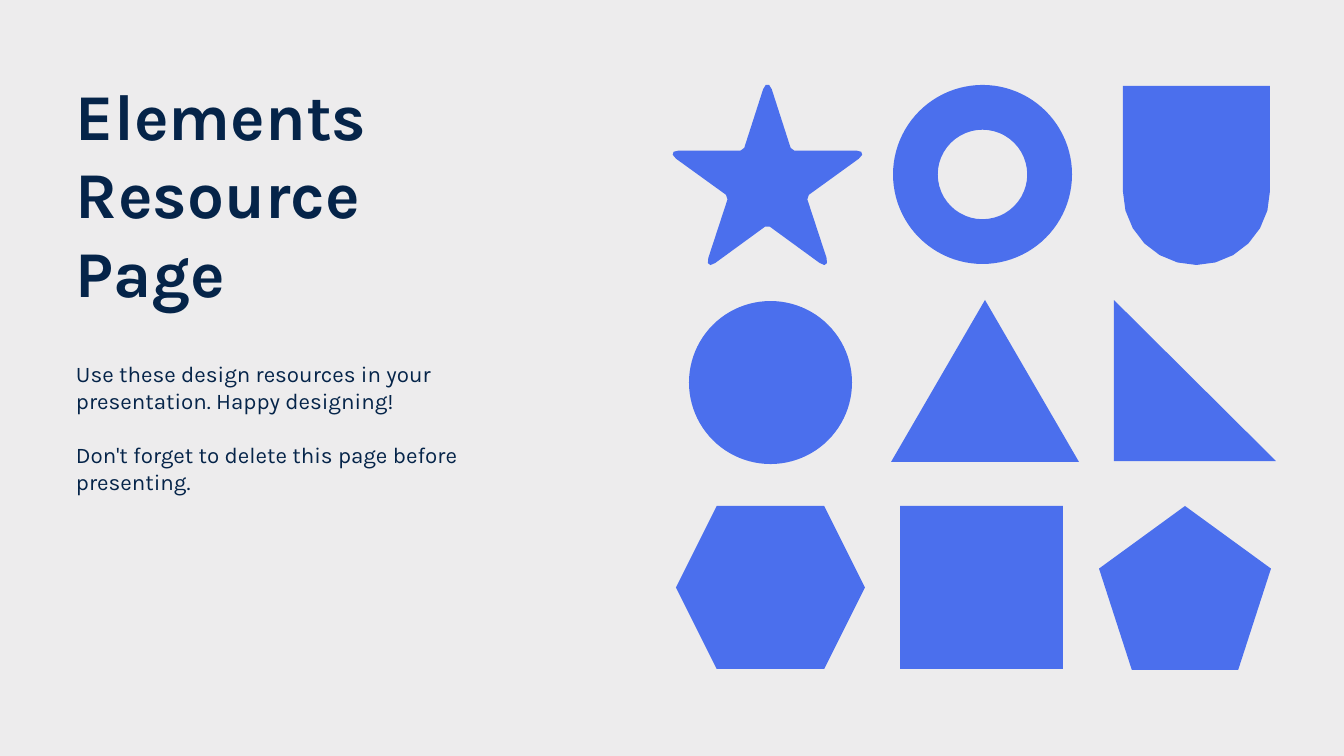
from dataclasses import dataclass
from math import cos, dist, pi, sin

from pptx import Presentation
from pptx.dml.color import RGBColor
from pptx.enum.shapes import MSO_SHAPE
from pptx.enum.text import MSO_ANCHOR, PP_ALIGN
from pptx.util import Emu, Pt

SLIDE_WIDTH, SLIDE_HEIGHT = 1344, 756
EMU_PER_PX = 914400 / 134.4


@dataclass(frozen=True)
class Theme:
    background: RGBColor = RGBColor(0xED, 0xEC, 0xED)
    ink: RGBColor = RGBColor(0x05, 0x24, 0x49)
    accent: RGBColor = RGBColor(0x4B, 0x6F, 0xED)
    font: str = "Karla"
    title_size: float = 35
    body_size: float = 12
    body_gap: float = 14.5


THEME = Theme()


def px(length):
    return Emu(round(length * EMU_PER_PX))


def add_text(slide, box, lines, size, bold=False, gap=0):
    """Place one paragraph per line, with a gap in points between paragraphs."""
    frame = slide.shapes.add_textbox(*map(px, box)).text_frame
    frame.word_wrap = True
    frame.vertical_anchor = MSO_ANCHOR.TOP
    frame.margin_left = frame.margin_top = frame.margin_right = frame.margin_bottom = 0
    for index, line in enumerate(lines):
        paragraph = frame.add_paragraph() if index else frame.paragraphs[0]
        paragraph.alignment = PP_ALIGN.LEFT
        paragraph.space_before = Pt(gap if index else 0)
        run = paragraph.add_run()
        run.text = line
        run.font.name = THEME.font
        run.font.size = Pt(size)
        run.font.bold = bold
        run.font.color.rgb = THEME.ink


def paint(shape):
    shape.shadow.inherit = False
    shape.fill.solid()
    shape.fill.fore_color.rgb = THEME.accent
    shape.line.fill.background()


def add_outline(slide, points):
    corners = [(px(x), px(y)) for x, y in points]
    builder = slide.shapes.build_freeform(*corners[0])
    builder.add_line_segments(corners[1:], close=True)
    paint(builder.convert_to_shape())


def toward(start, end, ratio):
    return tuple(s + (e - s) * ratio for s, e in zip(start, end))


def blunt_tip(before, corner, after, cut):
    """Return four points that round off a tip within the cut distance."""
    start = toward(corner, before, cut / dist(corner, before))
    end = toward(corner, after, cut / dist(corner, after))
    inner_start, inner_end = toward(corner, start, 2 / 3), toward(corner, end, 2 / 3)
    return [start, toward(inner_start, inner_end, 0.22),
            toward(inner_start, inner_end, 0.78), end]


def blunt_notch(before, corner, after, cut):
    return [toward(corner, side, cut / dist(corner, side)) for side in (before, after)]


def add_rounded_star(slide, box):
    left, top, width, _ = box
    center_x, center_y = left + width / 2, top + 99
    tip_radius, notch_radius, tip_cut, notch_cut = 108, 41, 14, 3
    corners = []
    for index in range(10):
        radius = notch_radius if index % 2 else tip_radius
        angle = index * pi / 5
        corners.append((center_x + radius * sin(angle), center_y - radius * cos(angle)))
    points = []
    for index, corner in enumerate(corners):
        before, after = corners[index - 1], corners[(index + 1) % 10]
        if index % 2:
            points += blunt_notch(before, corner, after, notch_cut)
        else:
            points += blunt_tip(before, corner, after, tip_cut)
    add_outline(slide, points)


def add_shield(slide, box, steps=12):
    """Draw a rectangle whose bottom is a half circle."""
    left, top, width, height = box
    radius = width / 2
    angles = [pi * step / steps for step in range(steps + 1)]
    arc = [
        (left + radius + radius * cos(angle), top + height - radius + radius * sin(angle))
        for angle in angles
    ]
    add_outline(slide, [(left, top), (left + width, top), *arc])


def add_message(slide, box):
    left, top, width, height = box
    title_height, body_top = 238, 285
    add_text(slide, (left, top, width, title_height), ["Elements", "Resource", "Page"],
             THEME.title_size, bold=True)
    add_text(
        slide,
        (left, top + body_top, width, height - body_top),
        ["Use these design resources in your presentation. Happy designing!",
         "Don't forget to delete this page before presenting."],
        THEME.body_size,
        gap=THEME.body_gap,
    )


def add_gallery(slide, box):
    left, top, _, _ = box
    add_shield(slide, (left + 451, top + 1, 147, 179))
    add_rounded_star(slide, (left, top, 191, 180))
    presets = [
        (MSO_SHAPE.REGULAR_PENTAGON, 427, 421, 172, 164),
        (MSO_SHAPE.RECTANGLE, 228, 421, 163, 163),
        (MSO_SHAPE.HEXAGON, 4, 421, 189, 163),
        (MSO_SHAPE.RIGHT_TRIANGLE, 442, 215, 162, 161),
        (MSO_SHAPE.ISOSCELES_TRIANGLE, 219, 215, 188, 162),
        (MSO_SHAPE.OVAL, 17, 216, 163, 163),
        (MSO_SHAPE.DONUT, 221, 0, 179, 179),
    ]
    for preset, x, y, width, height in presets:
        paint(slide.shapes.add_shape(
            preset, px(left + x), px(top + y), px(width), px(height)))


def main():
    presentation = Presentation()
    presentation.slide_width = px(SLIDE_WIDTH)
    presentation.slide_height = px(SLIDE_HEIGHT)
    slide = presentation.slides.add_slide(presentation.slide_layouts[6])
    slide.background.fill.solid()
    slide.background.fill.fore_color.rgb = THEME.background
    add_message(slide, (76, 75, 453, 421))
    add_gallery(slide, (672, 85, 604, 585))
    presentation.save("out.pptx")


if __name__ == "__main__":
    main()
